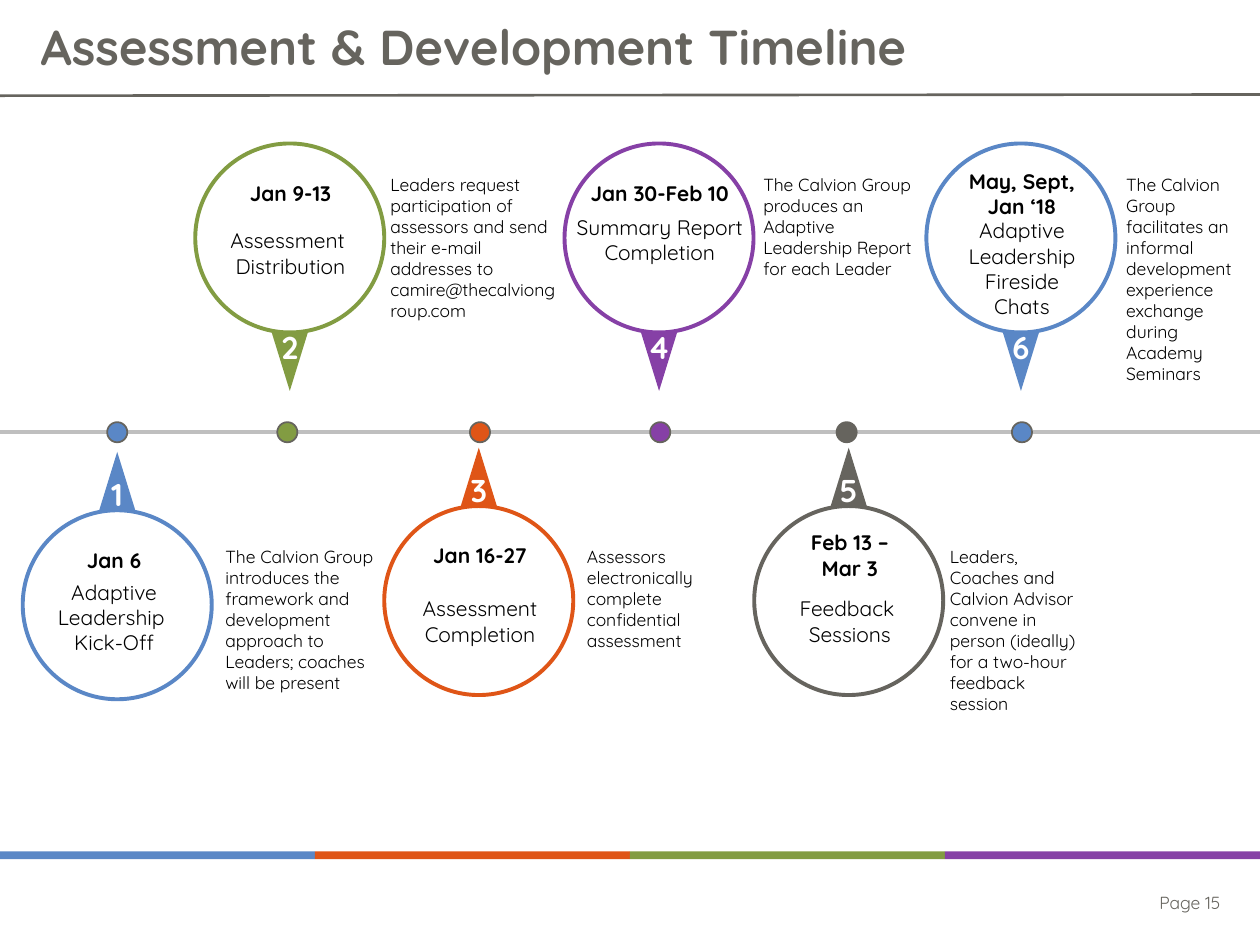
from lxml import etree
from pptx import Presentation
from pptx.dml.color import RGBColor
from pptx.enum.shapes import MSO_CONNECTOR, MSO_SHAPE
from pptx.enum.text import MSO_ANCHOR, MSO_AUTO_SIZE, PP_ALIGN
from pptx.oxml.ns import qn
from pptx.util import Pt

LEFT, CENTER, RIGHT = PP_ALIGN.LEFT, PP_ALIGN.CENTER, PP_ALIGN.RIGHT
TOP, MIDDLE = MSO_ANCHOR.TOP, MSO_ANCHOR.MIDDLE
NO_AUTOFIT = MSO_AUTO_SIZE.NONE
STRAIGHT = MSO_CONNECTOR.STRAIGHT
RECT, OVAL = MSO_SHAPE.RECTANGLE, MSO_SHAPE.OVAL
TRIANGLE = MSO_SHAPE.ISOSCELES_TRIANGLE

FONT = "Quicksand"
BLUE = RGBColor(0x5A, 0x87, 0xC6)
ORANGE = RGBColor(0xDF, 0x55, 0x17)
GREEN = RGBColor(0x82, 0x9C, 0x42)
PURPLE = RGBColor(0x86, 0x40, 0xA6)
GRAY = RGBColor(0x66, 0x64, 0x5E)
SILVER = RGBColor(0xBF, 0xBF, 0xBF)
WHITE = RGBColor(0xFF, 0xFF, 0xFF)
BLACK = RGBColor(0, 0, 0)

SLIDE_W, SLIDE_H = 720, 540
AXIS_Y = 247
CIRCLE, DOT = 108, 11.5
POINTER_W, POINTER_H = 21, 34

prs = Presentation()
prs.slide_width, prs.slide_height = Pt(SLIDE_W), Pt(SLIDE_H)
s = prs.slides.add_slide(prs.slide_layouts[5])


def add_text(text, x, y, w, h, sp=None, size=12, bold=False, color=BLACK,
             align=CENTER, anchor=TOP, spacing=None):
    """Write text in the placeholder sp, or in a new text box."""
    box = [Pt(v) for v in (x, y, w, h)]
    if sp is None:
        sp = s.shapes.add_textbox(*box)
    else:
        sp.left, sp.top, sp.width, sp.height = box
    tf = sp.text_frame
    tf.word_wrap = True
    tf.auto_size = NO_AUTOFIT
    tf.vertical_anchor = anchor
    tf.text = text
    for p in tf.paragraphs:
        p.alignment = align
        p.line_spacing = spacing
        p.font.name, p.font.size, p.font.bold = FONT, Pt(size), bold
        p.font.color.rgb = color


def add_shape(kind, x, y, w, h, fill, line=None, line_width=1):
    sp = s.shapes.add_shape(kind, Pt(x), Pt(y), Pt(w), Pt(h))
    sp.shadow.inherit = False
    sp.fill.solid()
    sp.fill.fore_color.rgb = fill
    if line is None:
        sp.line.fill.background()
    else:
        sp.line.color.rgb = line
        sp.line.width = Pt(line_width)
    return sp


# Header, footer and time axis
add_text("Assessment & Development Timeline", 16, 2, 688, 53, sp=s.shapes.title,
         size=28, bold=True, color=GRAY, align=LEFT, anchor=MIDDLE, spacing=0.9)

for y1, y2, color, width in [(54.7, 54, GRAY, 1.5),
                             (AXIS_Y, AXIS_Y, SILVER, 2.25)]:
    line = s.shapes.add_connector(STRAIGHT, 0, Pt(y1), Pt(SLIDE_W), Pt(y2))
    line.line.color.rgb = color
    line.line.width = Pt(width)
    etree.SubElement(line._element.spPr, qn("a:effectLst"))

band_w = SLIDE_W / 4
for i, color in enumerate([BLUE, ORANGE, GREEN, PURPLE]):
    add_shape(RECT, i * band_w, 486.5, band_w, 4.5, color)
add_text("Page 15", 584.5, 506, 120, 19.5, size=10, color=GRAY, align=RIGHT)

# Steps: colour, circle centre, circle top, dot centre, text centre,
# (date, width, top), (activity, width, top), (note, left, width)
steps = [
    (BLUE, 67, 291.6, 67, 65.2, ("Jan 6", 63, 311),
     ("Adaptive Leadership \vKick-Off", 110, 327.6),
     ("The Calvion Group introduces the framework and development approach "
      "to Leaders; coaches will be present", 121.7, 106.6)),
    (GREEN, 165.6, 82, 164.2, 166, ("Jan 9-13", 79, 101.5),
     ("Assessment \nDistribution", 110, 126.7),
     ("Leaders request participation of assessors and send their e-mail "
      "addresses to camire@thecalviongroup.com", 216, 110)),
    (ORANGE, 273.6, 289.2, 274.3, 274.3, ("Jan 16-27", 71, 308.2),
     ("Assessment Completion", 110, 337),
     ("Assessors electronically complete confidential assessment",
      328.3, 112)),
    (PURPLE, 376.6, 82, 377.3, 377, ("Jan 30-Feb 10", 107, 101.5),
     ("Summary Report Completion", 110, 118.8),
     ("The Calvion Group produces an Adaptive Leadership Report "
      "for each Leader", 429.1, 108)),
    (GRAY, 485, 289.2, 483.8, 485.6, ("Feb 13 – Mar 3", 71, 308.2),
     ("Feedback \vSessions", 110, 337),
     ("Leaders, Coaches and Calvion Advisor convene in person (ideally) "
      "for a two-hour feedback session", 535.7, 90)),
    (BLUE, 583.4, 82, 584, 584, ("May, Sept, Jan ‘18", 79, 101.5),
     ("Adaptive Leadership Fireside Chats", 79, 121),
     ("The Calvion Group facilitates an informal development experience "
      "exchange during Academy Seminars", 636.5, 88.6)),
]

for number, step in enumerate(steps, 1):
    color, cx, top, dot_x, text_x, date, activity, note = step
    above = number % 2 == 0
    pointer_y = top + CIRCLE - 0.6 if above else top - POINTER_H + 0.6
    number_y = top + 106.6 if above else top - 19.2
    note_y = 95.8 if above else 308.2

    add_shape(OVAL, dot_x - DOT / 2, AXIS_Y - DOT / 2, DOT, DOT, color, GRAY)
    add_shape(OVAL, cx - CIRCLE / 2, top, CIRCLE, CIRCLE, WHITE, color, 2.25)
    pointer = add_shape(TRIANGLE, cx - POINTER_W / 2, pointer_y,
                        POINTER_W, POINTER_H, color)
    pointer.rotation = 180 if above else 0
    add_text(str(number), cx - 15, number_y, 30, 19.5, size=18, bold=True,
             color=WHITE, anchor=MIDDLE)

    text, w, y = date
    add_text(text, text_x - w / 2, y, w, 18, bold=True, anchor=MIDDLE)
    text, w, y = activity
    add_text(text, text_x - w / 2, y, w, 51)
    text, x, w = note
    add_text(text, x, note_y, w, 92, size=10, align=LEFT)

prs.save("out.pptx")
